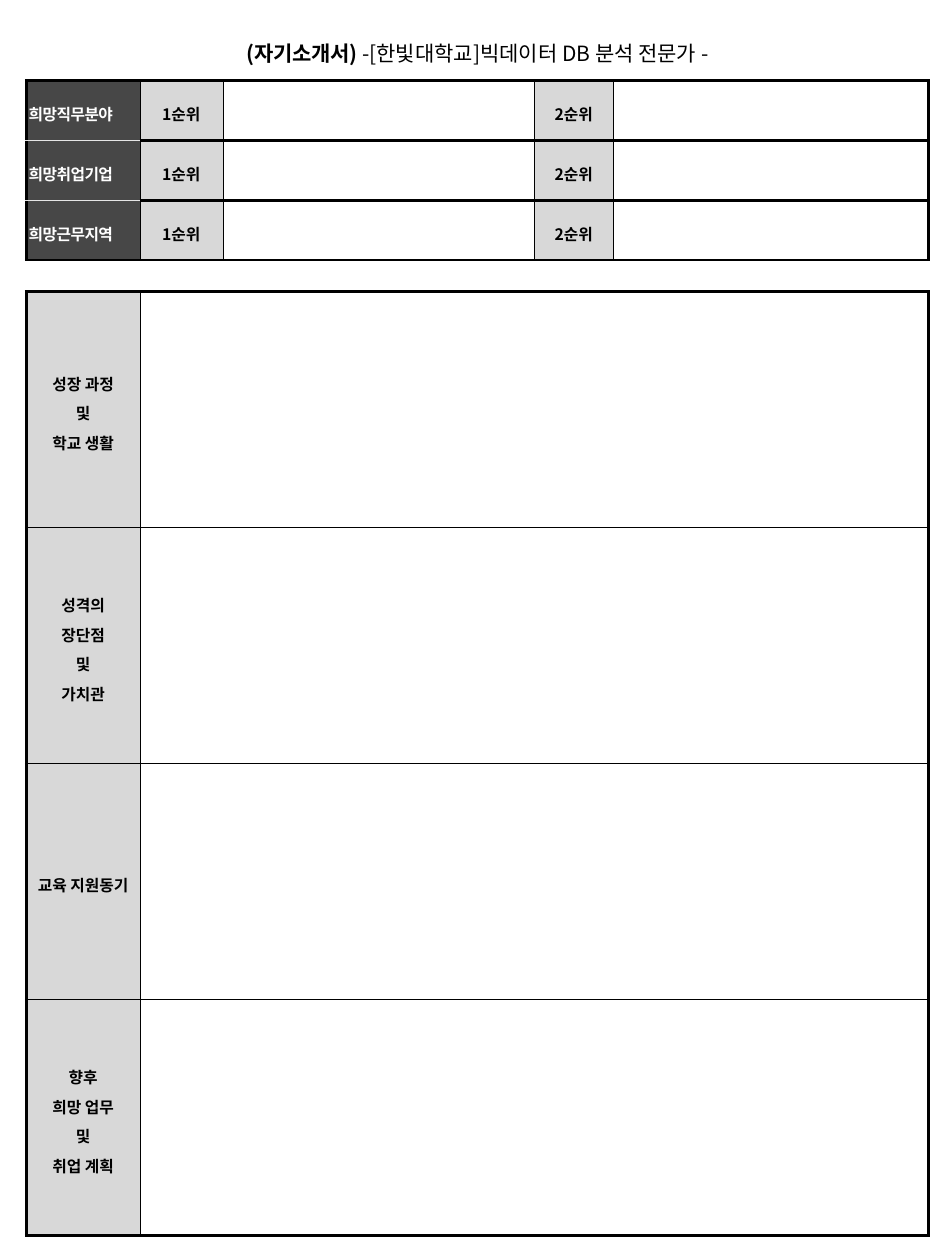
from lxml.etree import SubElement
from pptx import Presentation
from pptx.dml.color import RGBColor
from pptx.enum.text import MSO_ANCHOR, PP_ALIGN
from pptx.oxml.ns import qn
from pptx.util import Pt

FONT = "Noto Sans CJK KR"
BLACK, WHITE, DARK, GREY = "000000", "FFFFFF", "474747", "D8D8D8"
THICK, THIN, PALE = (BLACK, 1.7), (BLACK, 0.28), ("E5E5E5", 0.28)
NO_STYLE = "{2D5ABB26-0587-4C30-8999-92F81FD0307C}"

COLUMN_WIDTHS = [64.9, 47.4, 178.2, 44.7, 180.6]
ROW_HEIGHTS = [37.5] + [34.2] * 3 + [18] + [134.9] * 4
WISHES = ["희망직무분야", "희망취업기업", "희망근무지역"]
SECTIONS = [
    ["성장 과정", "및", "학교 생활"],
    ["성격의", "장단점", "및", "가치관"],
    ["교육 지원동기"],
    ["향후", "희망 업무", "및", "취업 계획"],
]


def color(code):
    return RGBColor.from_string(code)


def add_borders(cell, left=None, right=None, top=None, bottom=None):
    """Give each side a (colour, width) line, or none."""
    properties = cell._tc.get_or_add_tcPr()
    for side, line in zip("LRTB", (left, right, top, bottom)):
        edge = SubElement(properties, qn(f"a:ln{side}"))
        if line is None:
            SubElement(edge, qn("a:noFill"))
            continue
        edge.set("w", str(Pt(line[1])))
        fill = SubElement(edge, qn("a:solidFill"))
        SubElement(fill, qn("a:srgbClr")).set("val", line[0])


def style_cell(cell, fill=None, **borders):
    add_borders(cell, **borders)
    if fill:
        cell.fill.solid()
        cell.fill.fore_color.rgb = color(fill)
    else:
        cell.fill.background()
    cell.vertical_anchor = MSO_ANCHOR.MIDDLE
    cell.margin_left = cell.margin_right = Pt(1.4)
    cell.margin_top = cell.margin_bottom = Pt(0.7)


def style_paragraph(para, size=9, ink=BLACK, align=PP_ALIGN.CENTER, bold=True):
    para.alignment = align
    para.line_spacing = 1.3
    font = para.font
    font.name, font.size, font.bold = FONT, Pt(size), bold
    font.color.rgb = color(ink)
    SubElement(font._element, qn("a:ea")).set("typeface", FONT)


def add_span(para, text, spacing=0, bold=None):
    """Add a run; spacing is in points between letters."""
    span = para.add_run()
    span.text = text
    span.font.bold = bold
    if spacing:
        span.font._element.set("spc", str(round(spacing * 100)))


def write_lines(cell, lines, spacing=0, **style):
    frame = cell.text_frame
    for index, line in enumerate(lines):
        para = frame.add_paragraph() if index else frame.paragraphs[0]
        style_paragraph(para, **style)
        add_span(para, line, spacing)


def leave_empty(cell):
    """Keep the empty line small so that the row does not grow."""
    para = cell.text_frame.paragraphs[0]
    SubElement(para._p, qn("a:endParaRPr")).set("sz", "900")


def add_form(page):
    frame = page.shapes.add_table(
        len(ROW_HEIGHTS), len(COLUMN_WIDTHS), Pt(15), Pt(8.6),
        Pt(sum(COLUMN_WIDTHS)), Pt(sum(ROW_HEIGHTS)))
    form = frame.table
    form.first_row = form.horz_banding = False
    form._tbl.tblPr.find(qn("a:tableStyleId")).text = NO_STYLE
    for column, width in zip(form.columns, COLUMN_WIDTHS):
        column.width = Pt(width)
    for row, height in zip(form.rows, ROW_HEIGHTS):
        row.height = Pt(height)
    return form


def fill_title(form):
    cell = form.cell(0, 0)
    cell.merge(form.cell(0, 4))
    style_cell(cell, bottom=THICK)
    para = cell.text_frame.paragraphs[0]
    style_paragraph(para, size=12, bold=False)
    para.space_after = Pt(5)
    add_span(para, "(자기소개서) ", spacing=-0.2, bold=True)
    add_span(para, "-[한빛대학교]빅데이터 DB 분석 전문가 -")


def fill_wishes(form, first_row):
    last = len(WISHES) - 1
    for index, wish in enumerate(WISHES):
        row = first_row + index
        head = form.cell(row, 0)
        style_cell(head, DARK, left=THICK, right=THIN,
                   top=PALE if index else THICK,
                   bottom=PALE if index < last else THICK)
        write_lines(head, [wish], spacing=-0.3, ink=WHITE, align=PP_ALIGN.LEFT)
        for column, rank in enumerate(["1순위", "", "2순위", ""], start=1):
            cell = form.cell(row, column)
            style_cell(cell, GREY if rank else None, left=THIN,
                       right=THICK if column == 4 else THIN,
                       top=THICK, bottom=THICK)
            if rank:
                write_lines(cell, [rank])
            else:
                leave_empty(cell)


def fill_spacer(form, row):
    cell = form.cell(row, 0)
    cell.merge(form.cell(row, 4))
    style_cell(cell, top=THICK, bottom=THICK)
    leave_empty(cell)


def fill_sections(form, first_row):
    last = len(SECTIONS) - 1
    for index, lines in enumerate(SECTIONS):
        row = first_row + index
        edges = {"top": THIN if index else THICK,
                 "bottom": THIN if index < last else THICK}
        head, answer = form.cell(row, 0), form.cell(row, 1)
        answer.merge(form.cell(row, 4))
        style_cell(head, GREY, left=THICK, right=THIN, **edges)
        write_lines(head, lines)
        style_cell(answer, left=THIN, right=THICK, **edges)
        leave_empty(answer)


def main():
    deck = Presentation()
    deck.slide_width, deck.slide_height = Pt(540), Pt(720)
    page = deck.slides.add_slide(deck.slide_layouts[6])
    form = add_form(page)
    fill_title(form)
    fill_wishes(form, first_row=1)
    fill_spacer(form, row=4)
    fill_sections(form, first_row=5)
    deck.save("out.pptx")


if __name__ == "__main__":
    main()
